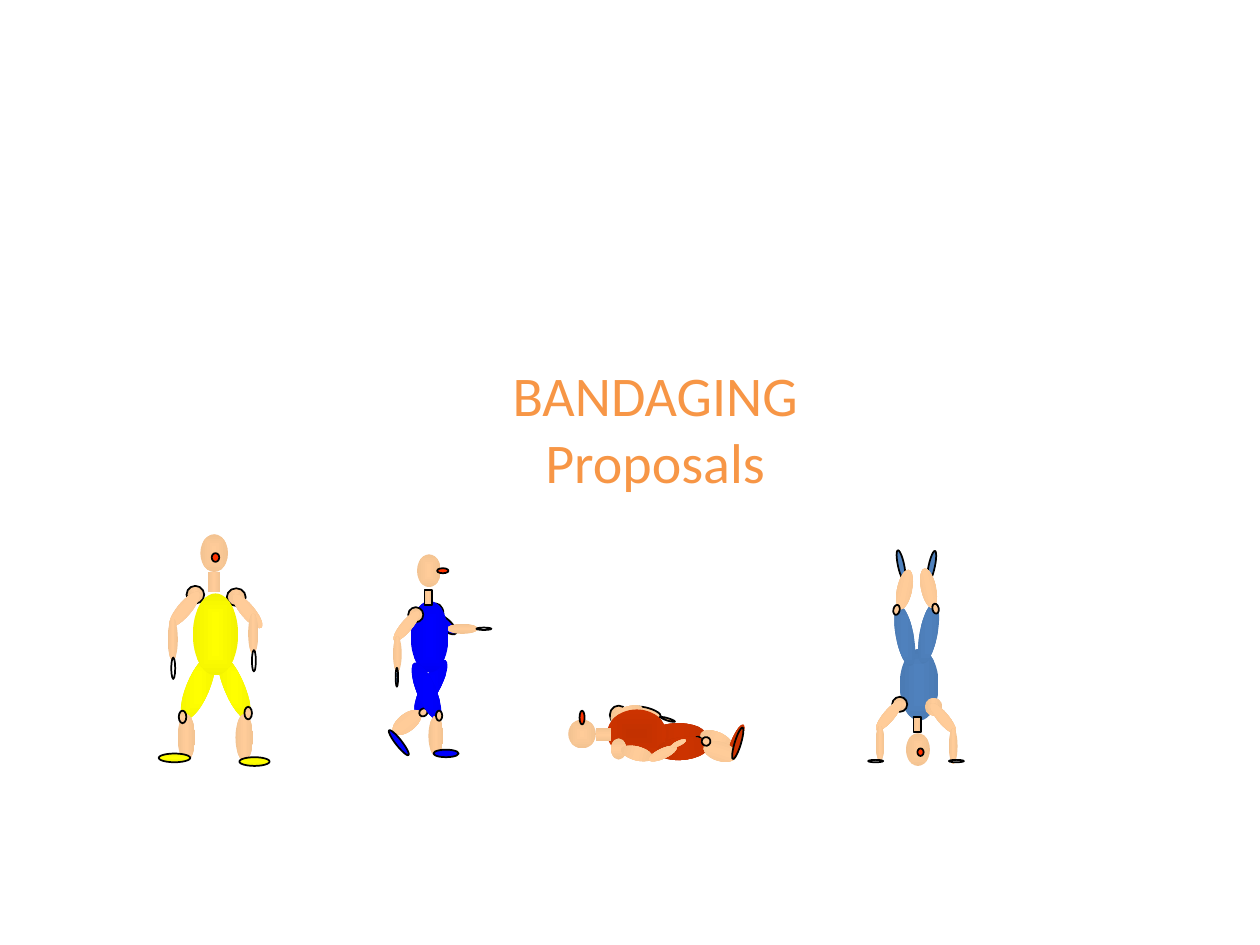
from dataclasses import dataclass

from pptx import Presentation
from pptx.dml.color import RGBColor
from pptx.enum.dml import MSO_PATTERN
from pptx.enum.shapes import MSO_SHAPE
from pptx.enum.text import MSO_AUTO_SIZE, PP_ALIGN
from pptx.oxml.ns import qn
from pptx.oxml.xmlchemy import OxmlElement
from pptx.shapes.autoshape import Shape
from pptx.slide import Slide
from pptx.util import Pt

OVAL = MSO_SHAPE.OVAL
RECT = MSO_SHAPE.RECTANGLE
STRIPES = MSO_PATTERN.DARK_HORIZONTAL
CENTER = PP_ALIGN.CENTER
GROW = MSO_AUTO_SIZE.SHAPE_TO_FIT_TEXT

HEX = {
    "skin": "FFCC99", "skin rim": "F3C392",
    "gold": "FFFF00", "gold rim": "F3F300",
    "blue": "0000FF", "blue rim": "0000F3",
    "steel": "4F81BD", "steel rim": "4B7BB4",
    "rust": "CC3300", "rust rim": "C33100",
    "nose": "FF3300", "white": "FFFFFF",
    "black": "000000", "title": "F79646",
}


@dataclass(frozen=True)
class Paint:
    tones: tuple[str, ...]
    mode: str = "flat"
    angle: int = 0


def core(tone: str) -> Paint:
    return Paint((tone, f"{tone} rim"), "core")


def band(tone: str, angle: int) -> Paint:
    return Paint((f"{tone} rim", tone, f"{tone} rim"), "band", angle)


FACE, GOLD, BLUE, STEEL = map(core, ("skin", "gold", "blue", "steel"))
SKIN, SKIN_V = band("skin", 0), band("skin", 90)
RUST, RUST_V = band("rust", 0), band("rust", 90)
GOLD_V, BLUE_V = band("gold", 90), band("blue", 90)
BELLY = Paint(("rust rim", "rust"), "core")
NOSE, WHITE = Paint(("nose",)), Paint(("white",))
HATCH = Paint(("steel", "white"), "hatch")


@dataclass(frozen=True)
class Part:
    left: float
    top: float
    width: float
    height: float
    paint: Paint
    edge: bool = False
    turn: int = 0
    form: MSO_SHAPE = OVAL


STANDER = [
    Part(114.5, 305.3, 15.8, 21.6, FACE),
    Part(106.6, 373, 13, 39.6, GOLD, turn=23),
    Part(128.2, 373, 11.5, 39.6, GOLD, turn=337),
    *(Part(x, 408.2, 10.1, 26.6, SKIN) for x in (101.5, 134.6)),
    Part(136.8, 432.7, 17.3, 5, GOLD_V, True),
    Part(90.7, 430.6, 18, 5, GOLD_V, True),
    Part(118.8, 326.9, 7.2, 11.5, SKIN, form=RECT),
    Part(129.6, 336.2, 10.8, 10.1, SKIN, True),
    Part(106.6, 334.8, 10.1, 10.1, SKIN, True),
    Part(101.5, 335.5, 7.9, 25.2, SKIN, turn=40),
    Part(137.5, 337, 7.9, 24.5, SKIN, turn=320),
    Part(102.2, 406.1, 4.3, 7.2, SKIN_V, True),
    Part(139.7, 403.9, 4.3, 7.2, SKIN_V, True),
    Part(95.8, 353.5, 5.8, 23.8, SKIN),
    Part(141.8, 350.6, 5.8, 23, SKIN),
    Part(97.9, 375.8, 2.2, 12.2, WHITE, True),
    Part(144, 371.5, 2.2, 12.2, WHITE, True),
    Part(121, 316.1, 4.3, 5, NOSE, True),
    Part(110.2, 339.1, 25.9, 46.8, GOLD),
]

WALKER = [
    Part(244.8, 344.9, 8.6, 11.5, HATCH, True),
    Part(250.6, 347.8, 6.5, 17.3, BLUE_V, True, 310),
    Part(255.6, 356.4, 17.3, 5.8, SKIN_V),
    Part(272.2, 358.6, 8.6, 1.4, HATCH, True),
    Part(241.2, 375.1, 10.1, 34.6, BLUE, turn=29),
    Part(227.5, 403.2, 10.1, 19.4, SKIN, turn=52),
    Part(218.9, 422.6, 18, 3.6, BLUE, True, 52),
    Part(239.8, 404.6, 4.3, 5, SKIN_V, True, 52),
    Part(238.3, 316.8, 13.7, 18.7, FACE),
    Part(234.7, 343.4, 21.6, 41, BLUE),
    Part(242.6, 337, 4.3, 8.6, SKIN, True, form=RECT),
    Part(238.3, 377.3, 10.8, 35.3, BLUE, turn=337),
    Part(244.8, 409, 8.6, 23, SKIN),
    Part(247.7, 428.4, 14.4, 4.3, BLUE, True),
    Part(249.1, 406.1, 3.6, 5.8, SKIN_V, True),
    Part(233.3, 347, 8.6, 8.6, SKIN_V, True),
    Part(229, 347, 6.5, 21.6, SKIN, turn=40),
    Part(224.6, 363.6, 5, 20.2, SKIN),
    Part(226.1, 381.6, 1.4, 10.8, HATCH, True),
    Part(249.8, 324.7, 6.5, 2.9, NOSE, True),
]

TUMBLER = [
    Part(523.4, 321.8, 18, 3.6, STEEL, True, 102),
    Part(517.7, 419, 13.7, 18.7, FACE),
    Part(514.1, 370.8, 22.3, 41, STEEL),
    Part(522, 409.7, 4.3, 8.6, SKIN, True, form=RECT),
    Part(525.6, 344.2, 10.1, 35.3, STEEL, turn=191),
    Part(526.3, 324.7, 8.6, 23, SKIN, turn=348),
    Part(506.2, 321.1, 17.3, 3.6, STEEL, True, 78),
    Part(532.8, 344.9, 3.6, 5.8, SKIN_V, True, 348),
    Part(528.5, 398.9, 10.1, 10.1, SKIN),
    Part(509.8, 398.2, 8.6, 8.6, SKIN_V, True),
    Part(504.7, 398.2, 6.5, 21.6, SKIN, turn=40),
    Part(535.7, 399.6, 6.5, 21.6, SKIN, turn=320),
    Part(500.4, 414.7, 5, 20.2, SKIN),
    Part(542.2, 416.2, 5, 20.2, SKIN),
    *(Part(x, 434.2, 8.6, 1.4, WHITE, True) for x in (496.1, 542.2)),
    Part(511.9, 345.6, 10.1, 35.3, STEEL, turn=169),
    Part(512.6, 325.4, 8.6, 23, SKIN, turn=12),
    Part(510.5, 345.6, 3.6, 5.8, SKIN_V, True, 12),
    Part(524.2, 427.7, 3.6, 4.3, NOSE, True),
]

SLEEPER = [
    Part(362.2, 404.6, 15.8, 5, SKIN_V, True, 17),
    Part(377.3, 410.4, 8.6, 1.4, SKIN_V, True, 17),
    Part(348.5, 403.2, 10.1, 10.8, SKIN, True),
    Part(354.2, 398.2, 7.9, 19.4, SKIN_V, turn=251),
    Part(382.3, 403.9, 11.5, 30.2, RUST_V, turn=271),
    Part(404.6, 413.3, 10.1, 20.2, SKIN_V, turn=294),
    Part(411.1, 420.5, 19.4, 5, RUST_V, turn=294),
    Part(398.2, 420.5, 3.6, 6.5, WHITE, True, 322),
    Part(324.7, 411.1, 15.8, 16.6, FACE),
    Part(347, 405.4, 33.8, 27.4, BELLY),
    Part(340.6, 416.2, 8.6, 7.2, SKIN_V, form=RECT),
    Part(383.8, 412.6, 13, 30.2, RUST_V, turn=264),
    Part(401.8, 424.1, 19.4, 10.8, SKIN_V, turn=17),
    Part(419.8, 415.4, 3.6, 18.7, RUST, True, 17),
    Part(401, 421.2, 5, 5, SKIN_V, True, 17),
    Part(349.2, 421.9, 8.6, 12.2, SKIN_V),
    Part(360, 421.2, 7.9, 18.7, SKIN_V, turn=285),
    Part(370.1, 427.7, 17.3, 5.8, SKIN_V, turn=335),
    Part(383, 423.4, 9.4, 2.9, SKIN_V, turn=335),
    Part(331.2, 406.1, 2.9, 7.9, NOSE, True),
]


def shade(shape: Shape, paint: Paint) -> None:
    shape.fill.gradient()
    grad = shape.fill._xPr.find(qn("a:gradFill"))
    grad.clear()
    grad.set("rotWithShape", "1")
    stops = OxmlElement("a:gsLst")
    grad.append(stops)
    for i, tone in enumerate(paint.tones):
        stop = OxmlElement("a:gs")
        stop.set("pos", str(100000 * i // (len(paint.tones) - 1)))
        color = OxmlElement("a:srgbClr")
        color.set("val", HEX[tone])
        stop.append(color)
        stops.append(stop)
    if paint.mode == "band":
        line = OxmlElement("a:lin")
        line.set("ang", str(paint.angle * 60000))
        line.set("scaled", "1")
        grad.append(line)
        return
    route = OxmlElement("a:path")
    route.set("path", "shape")
    focus = OxmlElement("a:fillToRect")
    for side in "ltrb":
        focus.set(side, "50000")
    route.append(focus)
    grad.append(route)


def draw_part(group, part: Part) -> None:
    shape = group.shapes.add_shape(
        part.form, Pt(part.left), Pt(part.top), Pt(part.width), Pt(part.height))
    shape.shadow.inherit = False
    shape.rotation = part.turn
    fill, paint = shape.fill, part.paint
    tones = [RGBColor.from_string(HEX[tone]) for tone in paint.tones]
    if paint.mode == "flat":
        fill.solid()
        fill.fore_color.rgb = tones[0]
    elif paint.mode == "hatch":
        fill.patterned()
        fill.pattern = STRIPES
        fill.fore_color.rgb, fill.back_color.rgb = tones
    else:
        shade(shape, paint)
    if part.edge:
        shape.line.color.rgb = RGBColor.from_string(HEX["black"])
        shape.line.width = Pt(1)
    else:
        shape.line.fill.background()


def draw_title(slide: Slide) -> None:
    frame = slide.shapes.add_textbox(
        Pt(65.5), Pt(202.3), Pt(617.8), Pt(123.8)).text_frame
    frame.word_wrap = True
    frame.auto_size = GROW
    frame.text = "BANDAGING\nProposals"
    for line in frame.paragraphs:
        line.alignment = CENTER
        font = line.runs[0].font
        font.name, font.size = "Calibri", Pt(32)
        font.color.rgb = RGBColor.from_string(HEX["title"])


def main() -> None:
    deck = Presentation()
    deck.slide_width, deck.slide_height = Pt(720), Pt(540)
    slide = deck.slides.add_slide(deck.slide_layouts[6])
    draw_title(slide)
    for figure in (STANDER, WALKER, TUMBLER, SLEEPER):
        group = slide.shapes.add_group_shape()
        for part in figure:
            draw_part(group, part)
    deck.save("out.pptx")


if __name__ == "__main__":
    main()
